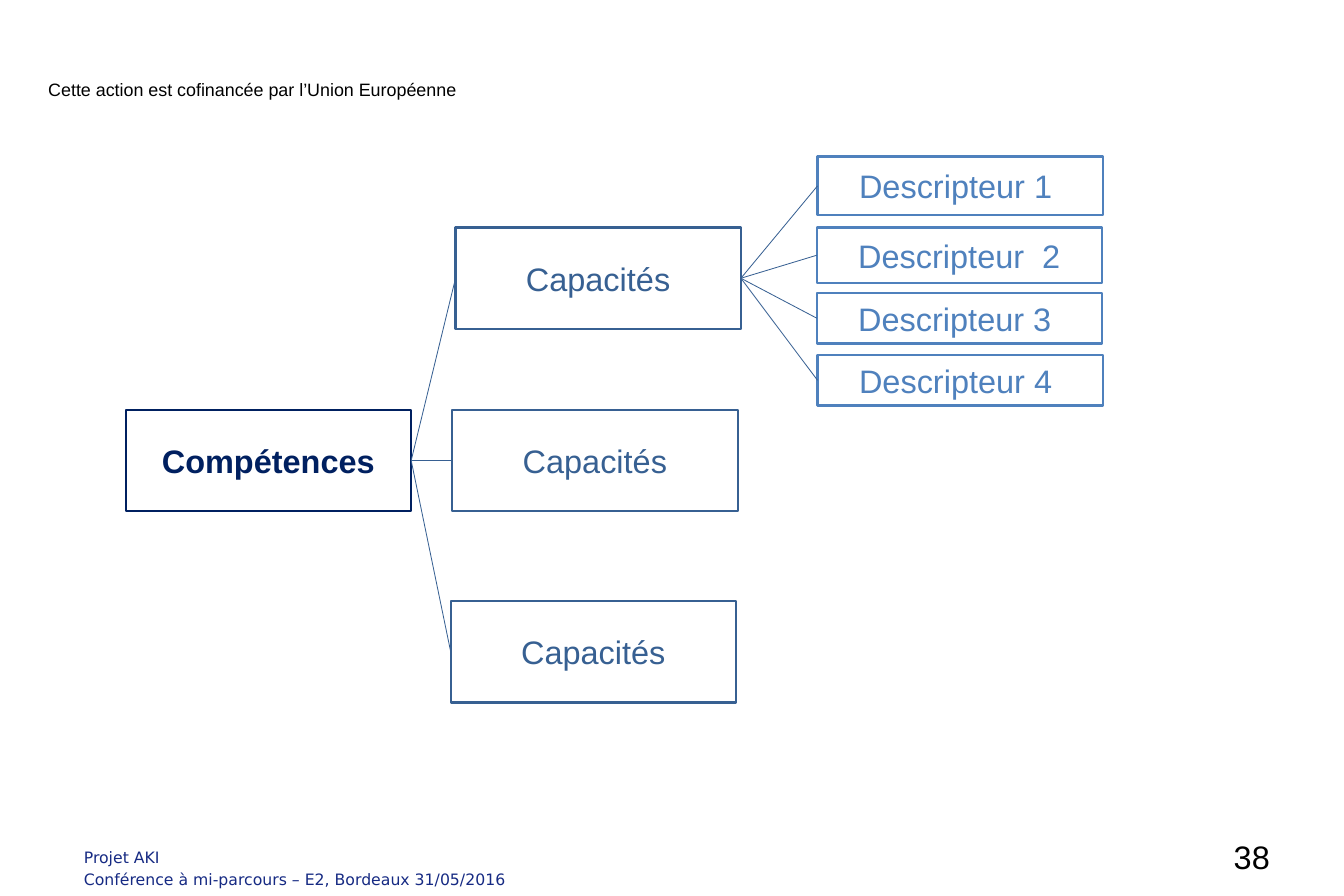
"""Builds the slide that breaks competences down into capacities and descriptors."""
from lxml import etree
from pptx import Presentation
from pptx.dml.color import RGBColor
from pptx.enum.shapes import MSO_CONNECTOR, MSO_SHAPE
from pptx.enum.text import MSO_ANCHOR, PP_ALIGN
from pptx.oxml.ns import qn
from pptx.util import Pt

PX = 9144
BOX_WIDTH = 354
COLORS = {
    "white": "FFFFFF",
    "black": "000000",
    "competence": "002060",
    "capacity": "376092",
    "descriptor": "4F81BD",
    "footer": "162A83",
}

presentation = Presentation()
presentation.slide_width = 1667 * PX
presentation.slide_height = 1111 * PX
slide = presentation.slides.add_slide(presentation.slide_layouts[6])


def write(paragraph, text, size, color, font="Arial", bold=False):
    run = paragraph.add_run()
    run.text = text
    run.font.size = Pt(size)
    run.font.name = font
    run.font.bold = bold
    run.font.color.rgb = RGBColor.from_string(COLORS[color])


def add_text(left, top, width, height, inset_x, inset_y, wrap=True):
    box = slide.shapes.add_textbox(left * PX, top * PX, width * PX, height * PX)
    frame = box.text_frame
    frame.word_wrap = wrap
    frame.margin_left = frame.margin_right = inset_x * PX
    frame.margin_top = frame.margin_bottom = inset_y * PX
    return frame


header = add_text(50, 93, 532, 37, 10, 5, wrap=False)
write(header.paragraphs[0], "Cette action est cofinancée par l’Union Européenne", 16, "black")

page_number = add_text(1194, 1030, 389, 59, 8, 8)
page_number.paragraphs[0].alignment = PP_ALIGN.RIGHT
write(page_number.paragraphs[0], "38", 29, "black")

boxes = [
    ("Compétences", "competence", 156, 508, 126),
    ("Capacités", "capacity", 565, 282, 126),
    ("Capacités", "capacity", 561, 508, 126),
    ("Capacités", "capacity", 559, 745, 126),
    ("Descripteur 1 ", "descriptor", 1014, 194, 73),
    ("Descripteur  2", "descriptor", 1013, 282, 69),
    ("Descripteur 3 ", "descriptor", 1013, 363, 63),
    ("Descripteur 4 ", "descriptor", 1014, 440, 63),
]
shapes = []
for text, level, left, top, height in boxes:
    shape = slide.shapes.add_shape(
        MSO_SHAPE.RECTANGLE, left * PX, top * PX, BOX_WIDTH * PX, height * PX)
    shape.shadow.inherit = False
    shape.fill.solid()
    shape.fill.fore_color.rgb = RGBColor.from_string(COLORS["white"])
    shape.line.color.rgb = RGBColor.from_string(COLORS[level])
    shape.line.width = Pt(2)
    shape.text_frame.vertical_anchor = MSO_ANCHOR.MIDDLE
    paragraph = shape.text_frame.paragraphs[0]
    paragraph.alignment = PP_ALIGN.CENTER
    write(paragraph, text, 29, level, bold=level == "competence")
    shapes.append(shape)

competence, first_capacity = shapes[:2]
links = [(competence, capacity) for capacity in shapes[1:4]]
links += [(first_capacity, descriptor) for descriptor in shapes[4:]]
for parent, child in links:
    connector = slide.shapes.add_connector(MSO_CONNECTOR.STRAIGHT, 0, 0, 0, 0)
    connector.begin_connect(parent, 3)
    connector.end_connect(child, 1)
    connector.line.color.rgb = RGBColor.from_string(COLORS["capacity"])
    connector.line.width = Pt(0.75)
    etree.SubElement(connector.element.spPr, qn("a:effectLst"))

footer = add_text(88, 1043, 702, 54, 16, 8)
write(footer.paragraphs[0], "Projet AKI", 14, "footer", "DejaVu Sans")
event = footer.add_paragraph()
event.space_before = Pt(3)
write(event, "Conférence à mi-parcours – E2, Bordeaux 31/05/2016", 14, "footer", "DejaVu Sans")

presentation.save("out.pptx")
